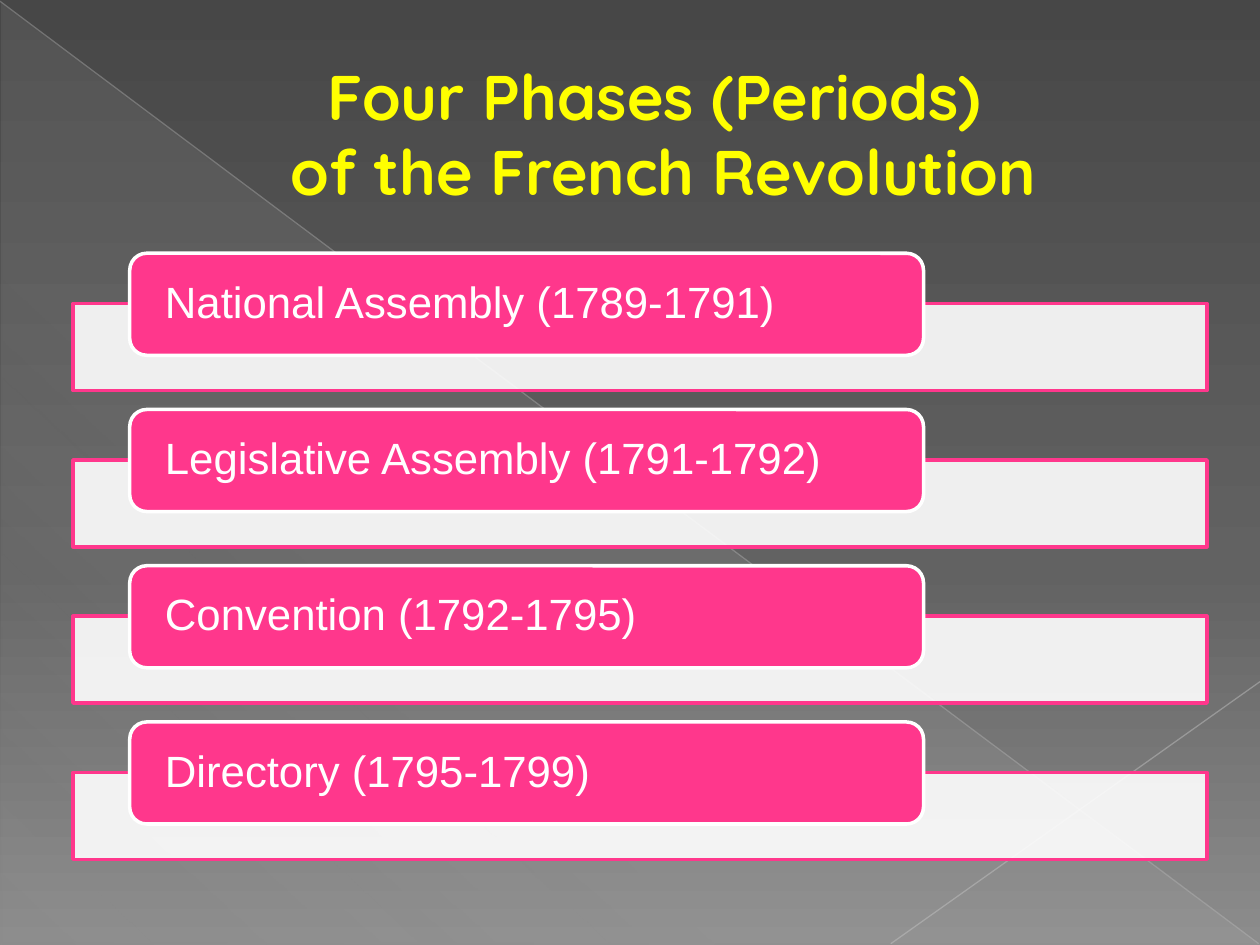
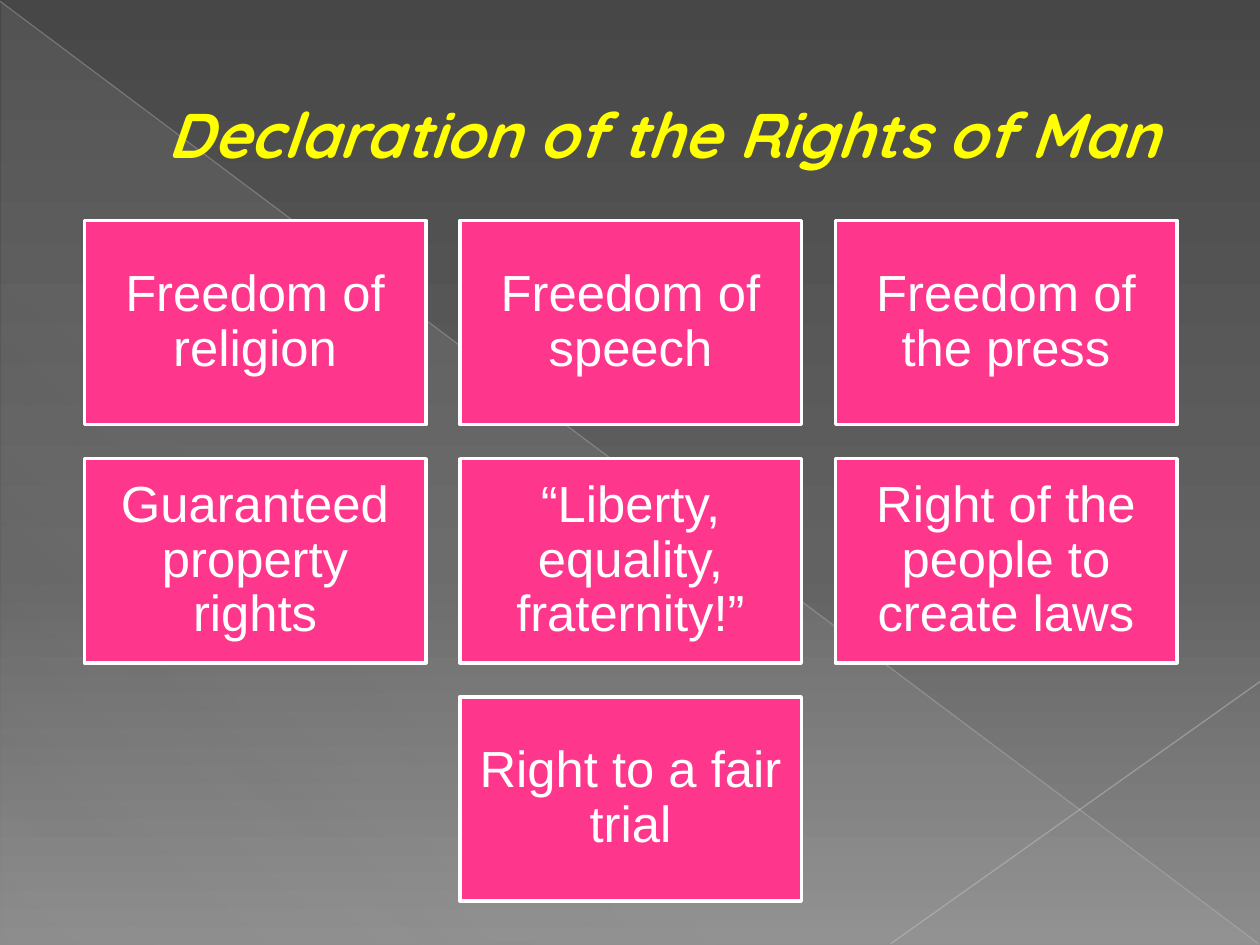
from pptx import Presentation
from pptx.dml.color import RGBColor
from pptx.enum.shapes import MSO_CONNECTOR, MSO_SHAPE
from pptx.enum.text import MSO_ANCHOR, PP_ALIGN
from pptx.oxml import parse_xml
from pptx.oxml.ns import nsdecls, qn
from pptx.util import Inches, Pt

PINK = RGBColor(0xFF, 0x37, 0x8C)
WHITE = RGBColor(0xFF, 0xFF, 0xFF)
YELLOW = RGBColor(0xFF, 0xFF, 0x00)
SHEEN = RGBColor(0xD2, 0xD2, 0xD2)
LONG_RAY = RGBColor(0xBE, 0xBE, 0xBE)
SHORT_RAY = RGBColor(0xC5, 0xC5, 0xC5)
BACKGROUND_STOPS = [
    (0, RGBColor(0x47, 0x47, 0x47), 100),
    (60, RGBColor(0x62, 0x62, 0x62), 100),
    (100, RGBColor(0x8C, 0x8C, 0x8C), 100),
]
SHEEN_STOPS = [(0, SHEEN, 10), (70, SHEEN, 8), (100, SHEEN, 1)]
TITLE_FONT = "Quicksand"
BODY_FONT = "Arial"

PHASES = [
    "National Assembly (1789-1791)",
    "Legislative Assembly (1791-1792)",
    "Convention (1792-1795)",
    "Directory (1795-1799)",
]
RIGHTS = [
    "Freedom of religion",
    "Freedom of speech",
    "Freedom of the press",
    "Guaranteed property rights",
    "“Liberty, equality, fraternity!”",
    "Right of the people to create laws",
    "Right to a fair trial",
]


def set_gradient(fill, properties, stops, angle):
    """Fill with a linear gradient of (position, colour, opacity) stops."""
    fill.solid()
    stop_list = "".join(
        f'<a:gs pos="{position * 1000}"><a:srgbClr val="{color}">'
        f'<a:alpha val="{opacity * 1000}"/></a:srgbClr></a:gs>'
        for position, color, opacity in stops
    )
    gradient = parse_xml(
        f'<a:gradFill {nsdecls("a")} rotWithShape="1"><a:gsLst>{stop_list}</a:gsLst>'
        f'<a:lin ang="{angle * 60000}" scaled="0"/></a:gradFill>'
    )
    properties.replace(properties.find(qn("a:solidFill")), gradient)


def set_opacity(properties, opacity):
    """Make the solid colour inside the properties partly transparent."""
    color = properties.find(qn("a:solidFill"))[0]
    color.append(parse_xml(f'<a:alpha {nsdecls("a")} val="{opacity * 1000}"/>'))


def add_ray(slide, start, end, color, opacity):
    """Draw a thin translucent line across the background."""
    ray = slide.shapes.add_connector(
        MSO_CONNECTOR.STRAIGHT, *(Inches(value) for value in start + end)
    )
    ray.line.color.rgb = color
    ray.line.width = Pt(0.75)
    properties = ray.element.spPr
    set_opacity(properties.find(qn("a:ln")), opacity)
    properties.append(parse_xml(f'<a:effectLst {nsdecls("a")}/>'))


def add_box(slide, preset, box, fill_color, line_color):
    """Add an outlined shape in a (left, top, width, height) box."""
    shape = slide.shapes.add_shape(preset, *(Inches(value) for value in box))
    shape.shadow.inherit = False
    shape.fill.solid()
    shape.fill.fore_color.rgb = fill_color
    shape.line.color.rgb = line_color
    shape.line.width = Pt(2)
    return shape


def add_run(paragraph, text, font_name, size, color):
    """Add one styled run and return its font."""
    run = paragraph.add_run()
    run.text = text
    run.font.name = font_name
    run.font.size = Pt(size)
    run.font.color.rgb = color
    return run.font


def set_label(shape, text, size, alignment, side_inset, end_inset):
    """Write a white label in the middle of a shape's height."""
    frame = shape.text_frame
    frame.word_wrap = True
    frame.vertical_anchor = MSO_ANCHOR.MIDDLE
    frame.margin_left = frame.margin_right = Inches(side_inset)
    frame.margin_top = frame.margin_bottom = Inches(end_inset)
    paragraph = frame.paragraphs[0]
    paragraph.alignment = alignment
    paragraph.line_spacing = 0.9
    add_run(paragraph, text, BODY_FONT, size, WHITE)


def add_title(slide, lines, italic):
    """Add the yellow slide title, one line break between its lines."""
    title = slide.shapes.add_textbox(Inches(0.5), Inches(0.29), Inches(9), Inches(1.53))
    frame = title.text_frame
    frame.word_wrap = True
    frame.vertical_anchor = MSO_ANCHOR.MIDDLE
    paragraph = frame.paragraphs[0]
    paragraph.alignment = PP_ALIGN.CENTER
    paragraph.font.size = Pt(36)
    paragraph._p.get_or_add_pPr().set("marL", str(Inches(0.53)))
    for index, line in enumerate(lines):
        if index:
            paragraph.add_line_break()
        font = add_run(paragraph, line, TITLE_FONT, 36, YELLOW)
        font.bold = True
        font.italic = italic


def add_base_slide(presentation, title_lines, italic=False):
    """Add a slide with the shared background, rays and title."""
    slide = presentation.slides.add_slide(presentation.slide_layouts[6])
    fill = slide.background.fill
    fill.solid()
    set_gradient(fill, slide.element.find(".//" + qn("p:bgPr")), BACKGROUND_STOPS, 90)
    sheen = add_box(slide, MSO_SHAPE.RIGHT_TRIANGLE, (0.01, 0.02, 9.99, 7.48), SHEEN, SHEEN)
    sheen.line.fill.background()
    set_gradient(sheen.fill, sheen.element.spPr, SHEEN_STOPS, 133)
    add_ray(slide, (0, 0.01), (9.99, 7.49), LONG_RAY, 35)
    add_ray(slide, (10, 5.41), (7.07, 7.49), SHORT_RAY, 45)
    add_title(slide, title_lines, italic)
    return slide


def add_phase_list(slide, phases, left, top, width, pitch):
    """Stack phase tabs, each overlapping a pale bar behind it."""
    for index, phase in enumerate(phases):
        tab_top = top + index * pitch
        bar = add_box(
            slide, MSO_SHAPE.RECTANGLE, (left, tab_top + 0.4, width, 0.69), WHITE, PINK
        )
        set_opacity(bar.element.spPr, 90)
        tab = add_box(
            slide,
            MSO_SHAPE.ROUNDED_RECTANGLE,
            (left + 0.05 * width, tab_top, 0.7 * width, 0.81),
            PINK,
            WHITE,
        )
        set_label(tab, phase, 25, PP_ALIGN.LEFT, 0.24, 0)


def add_rights_grid(slide, rights, left, top, columns=3):
    """Lay out rights as cards in rows, centring a short last row."""
    width, height, gap = 2.71, 1.62, 0.27
    for index, right in enumerate(rights):
        row, column = divmod(index, columns)
        row_count = min(columns, len(rights) - row * columns)
        column += (columns - row_count) / 2
        box = (left + column * (width + gap), top + row * (height + gap), width, height)
        card = add_box(slide, MSO_SHAPE.RECTANGLE, box, PINK, WHITE)
        set_label(card, right, 29, PP_ALIGN.CENTER, 0.12, 0.12)


def main():
    """Build and save the two slides."""
    presentation = Presentation()
    presentation.slide_width = Inches(10)
    presentation.slide_height = Inches(7.5)
    phases_slide = add_base_slide(
        presentation, ["Four Phases (Periods) ", "of the French Revolution"]
    )
    add_phase_list(phases_slide, PHASES, 0.58, 2.01, 9, 1.24)
    rights_slide = add_base_slide(
        presentation, ["Declaration of the Rights of Man"], italic=True
    )
    add_rights_grid(rights_slide, RIGHTS, 0.67, 1.75)
    presentation.save("out.pptx")


if __name__ == "__main__":
    main()
